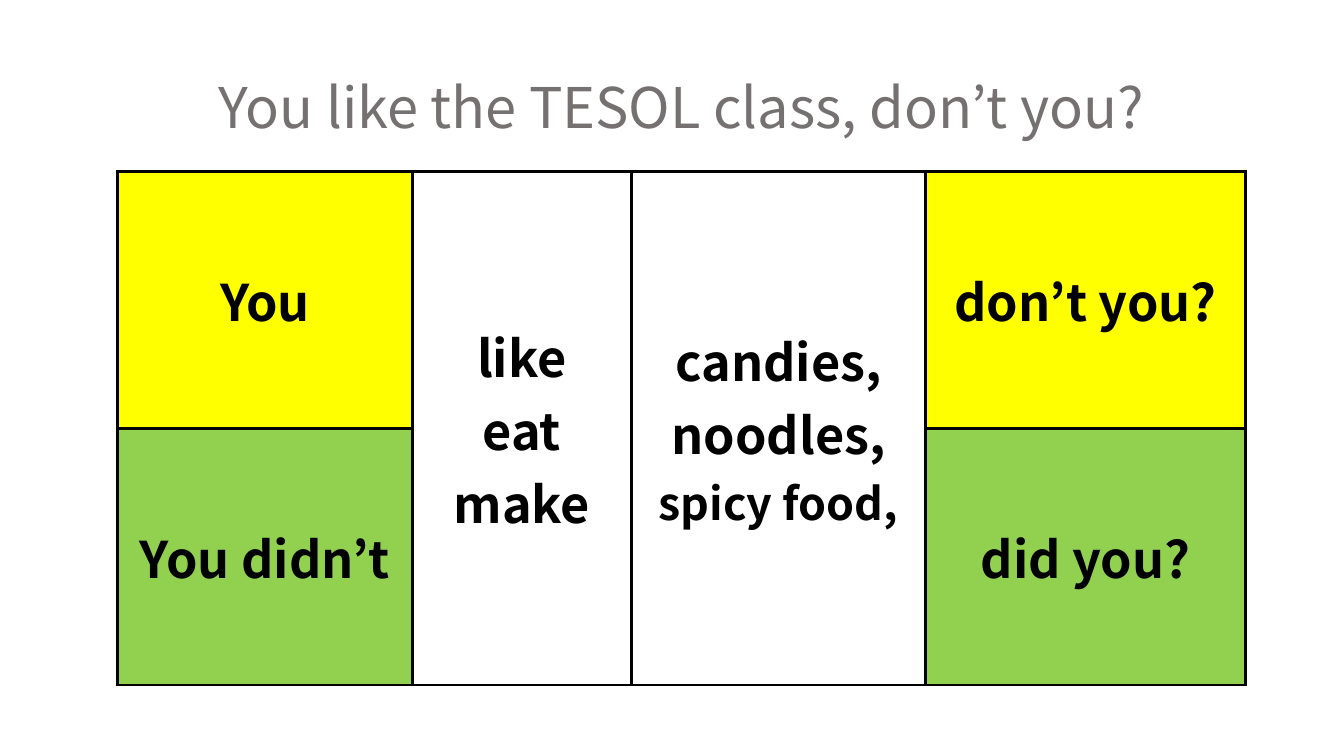
import pptx
import pptx.util
import pptx.dml.color
import pptx.enum.text
import pptx.oxml
import pptx.oxml.ns
import lxml.etree

Cm, Pt = pptx.util.Cm, pptx.util.Pt
FONT = "Noto Sans CJK KR"
BLACK, GREY, WHITE, YELLOW, GREEN = "000000", "767171", "FFFFFF", "FFFF00", "92D050"

TITLE = "You like the TESOL class, don’t you?"
TITLE_BOX = (5.23, 1.7, 23.88, 1.96)
TABLE_POS = (2.97, 4.32)
COLS = (7.42, 5.52, 7.42, 8.06)
ROWS = (6.47, 6.47)
CELLS = [
    (0, 0, 1, YELLOW, [("You", 36)]),
    (0, 1, 2, WHITE, [("like", 36), ("eat", 36), ("make", 36)]),
    (0, 2, 2, WHITE, [("candies,", 36), ("noodles,", 36), ("spicy food,", 32)]),
    (0, 3, 1, YELLOW, [("don’t you?", 36)]),
    (1, 0, 1, GREEN, [("You didn’t", 36)]),
    (1, 3, 1, GREEN, [("did you?", 36)]),
]


def rgb(color):
    return pptx.dml.color.RGBColor.from_string(color)


def write(tf, lines, color, bold):
    for i, (text, size) in enumerate(lines):
        p = tf.paragraphs[0] if i == 0 else tf.add_paragraph()
        p.alignment = pptx.enum.text.PP_ALIGN.CENTER
        r = p.add_run()
        r.text = text
        fmt = {"name": FONT, "size": Pt(size), "bold": bold}
        for key, value in fmt.items():
            setattr(r.font, key, value)
        r.font.color.rgb = rgb(color)
        ea = lxml.etree.SubElement(r.font._element, pptx.oxml.ns.qn("a:ea"))
        ea.set("typeface", FONT)


def add_borders(cell):
    tc_pr = cell._tc.get_or_add_tcPr()
    for side in "LRTB":
        tc_pr.append(pptx.oxml.parse_xml(
            f'<a:ln{side} {pptx.oxml.ns.nsdecls("a")} w="{Pt(2.25)}">'
            f'<a:solidFill><a:srgbClr val="{BLACK}"/></a:solidFill></a:ln{side}>'))


prs = pptx.Presentation()
prs.slide_width, prs.slide_height = Cm(33.87), Cm(19.05)
s = prs.slides.add_slide(prs.slide_layouts[6])

size = (sum(COLS), sum(ROWS))
table = s.shapes.add_table(len(ROWS), len(COLS), *map(Cm, TABLE_POS + size)).table
for flag in ("first_row", "horz_banding"):
    setattr(table, flag, False)
for col, width in zip(table.columns, COLS):
    col.width = Cm(width)
for row, height in zip(table.rows, ROWS):
    row.height = Cm(height)
for cell in table.iter_cells():
    add_borders(cell)

for row, col, span, fill, lines in CELLS:
    cell = table.cell(row, col)
    if span > 1:
        cell.merge(table.cell(row + span - 1, col))
    cell.vertical_anchor = pptx.enum.text.MSO_ANCHOR.MIDDLE
    cell.fill.solid()
    cell.fill.fore_color.rgb = rgb(fill)
    write(cell.text_frame, lines, BLACK, True)

tf = s.shapes.add_textbox(*map(Cm, TITLE_BOX)).text_frame
tf.word_wrap = False
tf.auto_size = pptx.enum.text.MSO_AUTO_SIZE.SHAPE_TO_FIT_TEXT
write(tf, [(TITLE, 40)], GREY, False)

prs.save("out.pptx")
